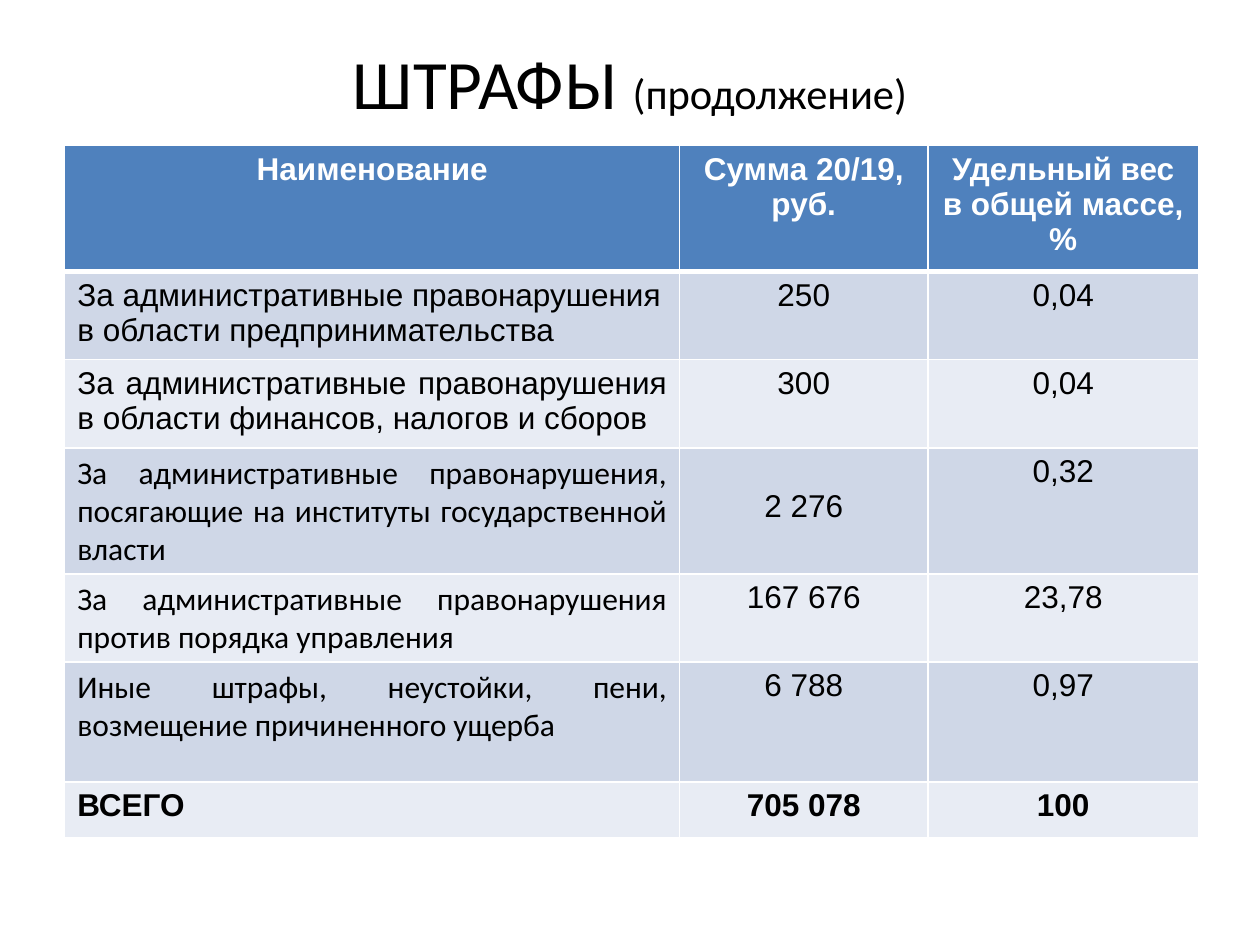
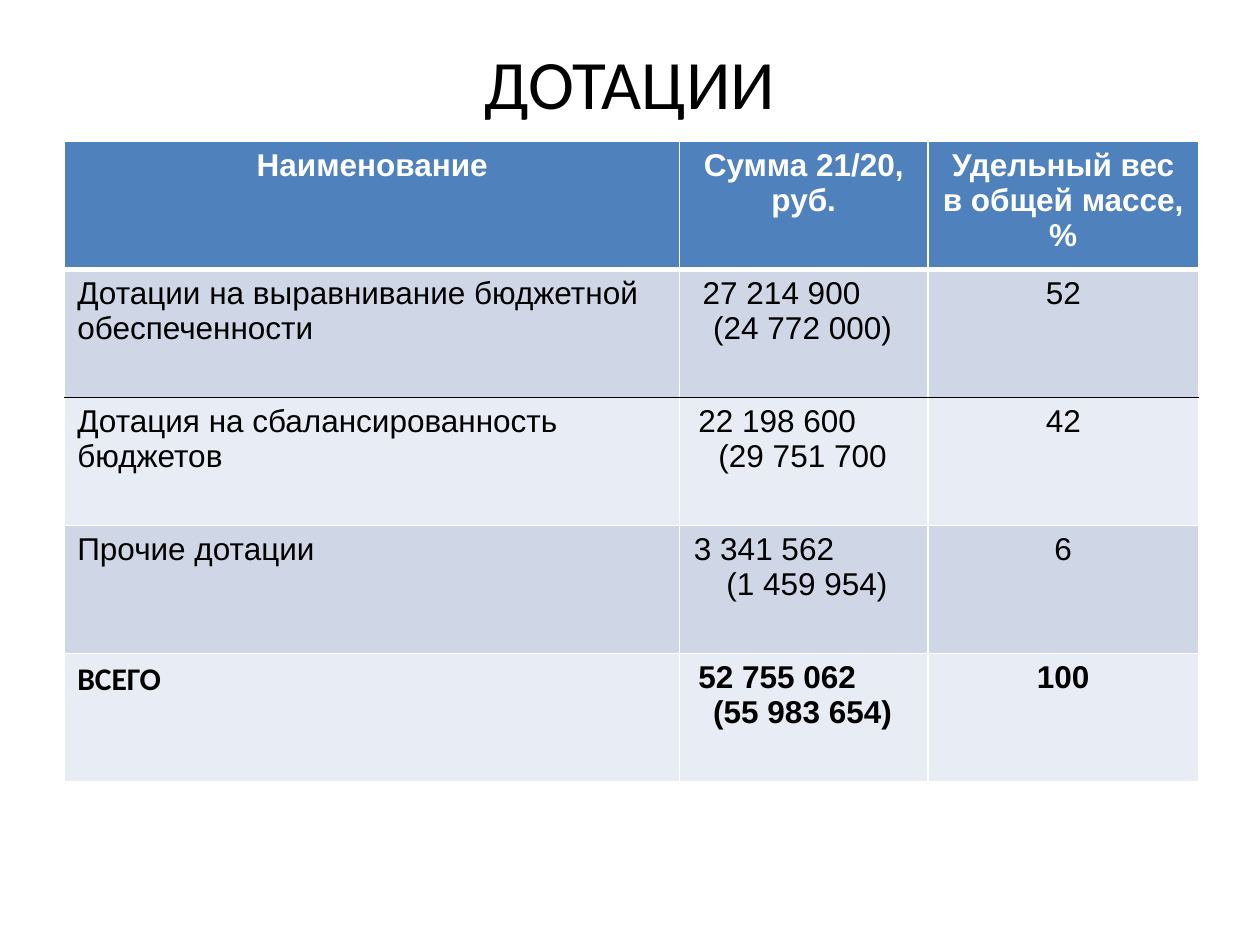
from dataclasses import dataclass

from lxml.etree import SubElement
from pptx import Presentation
from pptx.dml.color import RGBColor
from pptx.enum.text import MSO_ANCHOR, PP_ALIGN
from pptx.oxml.ns import qn
from pptx.util import Pt


@dataclass(frozen=True)
class Theme:
    black: str = "000000"
    white: str = "FFFFFF"
    header: str = "4F81BD"
    bands: tuple = ("CFD7E7", "E8ECF4")
    head_font: str = "Calibri"
    body_font: str = "Arial"
    title_size: float = 39.6
    subtitle_size: float = 24.3
    body_size: float = 18


THEME = Theme()
TITLE_BOX = (36, 21.6, 648, 49.7)
COLUMNS = (351.4, 141.8, 154.8)
LEFT, CENTER, JUSTIFY = PP_ALIGN.LEFT, PP_ALIGN.CENTER, PP_ALIGN.JUSTIFY


def add_run(p, text, size, font, color, bold=False):
    r = p.add_run()
    r.text = text
    for name, value in {"size": Pt(size), "name": font, "bold": bold}.items():
        setattr(r.font, name, value)
    r.font.color.rgb = RGBColor.from_string(color)


def add_title(s, box, title, subtitle=""):
    tf = s.shapes.add_textbox(*map(Pt, box)).text_frame
    tf.word_wrap = True
    tf.vertical_anchor = MSO_ANCHOR.MIDDLE
    p = tf.paragraphs[0]
    p.alignment = CENTER
    for text, size in ((title, THEME.title_size), (subtitle, THEME.subtitle_size)):
        if text:
            add_run(p, text, size, THEME.head_font, THEME.black)


def set_borders(cell, top, bottom):
    tc_pr = cell._tc.get_or_add_tcPr()
    thin = (THEME.white, 1)
    for side, (color, width) in zip("LRTB", (thin, thin, top, bottom)):
        ln = SubElement(tc_pr, qn(f"a:ln{side}"), w=str(Pt(width)))
        fill = SubElement(ln, qn("a:solidFill"))
        SubElement(fill, qn("a:srgbClr"), val=color)


def fill_cell(cell, text, fill, color, align=CENTER, font=THEME.body_font,
              bold=False, indents=None, drop=0):
    """indents: left edges of the first and second line; drop: extra top margin."""
    cell.fill.solid()
    cell.fill.fore_color.rgb = RGBColor.from_string(fill)
    cell.margin_top = Pt(3.6 + drop)
    p = cell.text_frame.paragraphs[0]
    p.alignment = align
    for i, line in enumerate(text.split("\n")):
        if i:
            p.add_line_break()
        add_run(p, line, THEME.body_size, font, color, bold)
    if indents:
        first, rest = indents
        p_pr = p._p.get_or_add_pPr()
        p_pr.set("marL", str(Pt(rest)))
        p_pr.set("indent", str(Pt(first - rest)))


def add_budget_table(s, left, top, heights, period, rows, black_rule=None):
    """Each row is (name, name format, sum, sum format, share)."""
    table = s.shapes.add_table(len(heights), len(COLUMNS), Pt(left), Pt(top),
                               Pt(sum(COLUMNS)), Pt(sum(heights))).table
    table.first_row = table.horz_banding = False
    for column, width in zip(table.columns, COLUMNS):
        column.width = Pt(width)
    for row, height in zip(table.rows, heights):
        row.height = Pt(height)

    # Rules: thick under the header, optionally black under one row
    rules = [(THEME.white, 1)] * (len(heights) + 1)
    rules[1] = (THEME.white, 3)
    if black_rule:
        rules[black_rule] = (THEME.black, 1)
    for i, row in enumerate(table.rows):
        for cell in row.cells:
            set_borders(cell, rules[i], rules[i + 1])

    # Header
    heads = ("Наименование", f"Сумма {period}, руб.", "Удельный вес в общей массе, %")
    for cell, text in zip(table.rows[0].cells, heads):
        fill_cell(cell, text, THEME.header, THEME.white, bold=True)

    # Body, the last row being the bold total
    for i, (name, name_fmt, amount, amount_fmt, share) in enumerate(rows):
        parts = ((name, name_fmt), (amount, amount_fmt), (share, {}))
        for cell, (text, fmt) in zip(table.rows[i + 1].cells, parts):
            fill_cell(cell, text, THEME.bands[i % 2], THEME.black,
                      bold=i == len(rows) - 1, **fmt)


def two_lines(first, rest):
    return {"align": LEFT, "indents": (first, rest)}


def main():
    prs = Presentation()
    prs.slide_width, prs.slide_height = Pt(720), Pt(540)
    blank = prs.slide_layouts[6]
    plain = {"align": LEFT}
    justified = {"align": JUSTIFY}
    calibri = {"align": JUSTIFY, "font": THEME.head_font}

    # Fines
    s = prs.slides.add_slide(blank)
    add_title(s, TITLE_BOX, "ШТРАФЫ ", "(продолжение)")
    add_budget_table(s, 37, 83, (48.2, 48.2, 46.8, 48.2, 42.5, 68.4, 31.7), "20/19", [
        ("За административные правонарушения в области предпринимательства",
         plain, "250", {}, "0,04"),
        ("За административные правонарушения в области финансов, налогов и сборов",
         justified, "300", {}, "0,04"),
        ("За административные правонарушения, посягающие на институты "
         "государственной власти", calibri, "2 276", {"drop": 20}, "0,32"),
        ("За административные правонарушения против порядка управления",
         calibri, "167 676", {}, "23,78"),
        ("Иные штрафы, неустойки, пени, возмещение причиненного ущерба",
         calibri, "6 788", {}, "0,97"),
        ("ВСЕГО", plain, "705 078", {}, "100"),
    ])

    # Grants
    s = prs.slides.add_slide(blank)
    add_title(s, TITLE_BOX, "ДОТАЦИИ")
    add_budget_table(s, 37, 80.8, (73.2,) * 5, "21/20", [
        ("Дотации на выравнивание бюджетной обеспеченности", plain,
         "27 214 900\n(24 772 000)", two_lines(6, 12), "52"),
        ("Дотация на сбалансированность бюджетов", plain,
         "22 198 600\n(29 751 700", two_lines(3.5, 15), "42"),
        ("Прочие дотации", justified,
         "3 341 562\n(1 459 954)", two_lines(1, 19.5), "6"),
        ("ВСЕГО", calibri,
         "52 755 062\n(55 983 654)", two_lines(3.5, 12), "100"),
    ], black_rule=2)

    prs.save("out.pptx")


if __name__ == "__main__":
    main()
